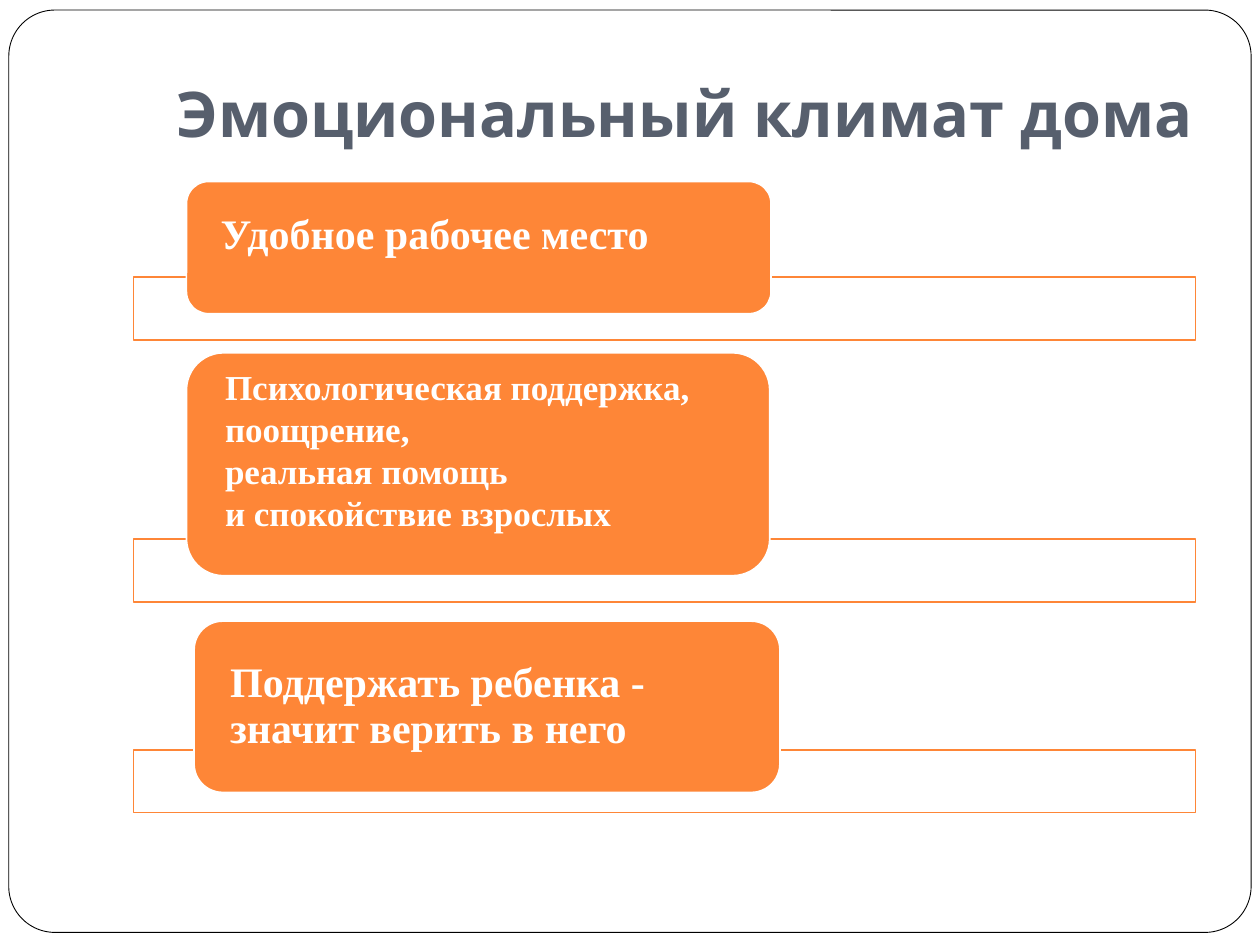
from dataclasses import dataclass

from lxml import etree
from pptx import Presentation, util as u
from pptx.dml.color import RGBColor
from pptx.enum import shapes, text
from pptx.oxml.ns import qn

COLUMNS, ROWS = 100, 75
CELL = u.Inches(0.1)
ORANGE, WHITE, BLACK, SLATE = "FE8637", "FFFFFF", "000000", "575F6D"
BAR_LEFT, BAR_WIDTH, BAR_HEIGHT = 10.6, 84.3, 5


@dataclass
class Advice:
    lines: list[str]
    left: float
    top: float
    width: float
    height: float
    bar_top: float
    size: int = 24
    align: text.PP_ALIGN = text.PP_ALIGN.JUSTIFY
    spacing: float = 1.0
    bottom_inset: float = 0.23


ADVICE = [
    Advice(["Удобное рабочее место"], 14.8, 14.4, 46.4, 10.5, 22),
    Advice(["Психологическая поддержка,", "поощрение,", "реальная помощь",
            "и спокойствие взрослых"], 14.8, 28, 46.3, 17.7, 42.8, size=20),
    Advice(["Поддержать ребенка - значит верить в него"], 15.4, 49.3, 46.5, 13.6, 59.5,
           align=text.PP_ALIGN.LEFT, spacing=0.9, bottom_inset=0),
]


def cells(*counts: float) -> list[int]:
    return [round(count * CELL) for count in counts]


def color(value: str) -> RGBColor:
    return RGBColor.from_string(value)


def add_box(slide, kind, place: tuple, fill: str, line: str, weight: float, opacity: int = 100):
    box = slide.shapes.add_shape(kind, *cells(*place))
    box.shadow.inherit = False
    box.fill.solid()
    box.fill.fore_color.rgb = color(fill)
    box.line.color.rgb = color(line)
    box.line.width = u.Pt(weight)
    if opacity < 100:
        tint = box.fill._xPr.find(qn("a:solidFill"))[0]
        etree.SubElement(tint, qn("a:alpha"), val=str(opacity * 1000))
    return box


def write(shape, lines: list[str], *, font: str, size: int, ink: str, anchor, insets: tuple,
          align=text.PP_ALIGN.LEFT, spacing: float = 1.0) -> None:
    frame = shape.text_frame
    frame.word_wrap = True
    frame.auto_size = text.MSO_AUTO_SIZE.NONE
    frame.vertical_anchor = anchor
    (frame.margin_left, frame.margin_top,
     frame.margin_right, frame.margin_bottom) = map(u.Inches, insets)
    frame.text = "\n".join(lines)
    for paragraph in frame.paragraphs:
        paragraph.alignment = align
        paragraph.line_spacing = spacing
        for run in paragraph.runs:
            run.font.name = font
            run.font.size = u.Pt(size)
            run.font.bold = True
            run.font.color.rgb = color(ink)


def draw_advice(slide, advice: Advice) -> None:
    add_box(slide, shapes.MSO_SHAPE.RECTANGLE,
            (BAR_LEFT, advice.bar_top, BAR_WIDTH, BAR_HEIGHT), WHITE, ORANGE, 1, opacity=90)
    card = add_box(slide, shapes.MSO_SHAPE.ROUNDED_RECTANGLE,
                   (advice.left, advice.top, advice.width, advice.height), ORANGE, WHITE, 1)
    write(card, advice.lines, font="Times New Roman", size=advice.size, ink=WHITE,
          anchor=text.MSO_ANCHOR.MIDDLE, insets=(0.22, 0, 0.22, advice.bottom_inset),
          align=advice.align, spacing=advice.spacing)


def main() -> None:
    deck = Presentation()
    deck.slide_width, deck.slide_height = cells(COLUMNS, ROWS)
    slide = deck.slides.add_slide(deck.slide_layouts[5])

    border = add_box(slide, shapes.MSO_SHAPE.ROUNDED_RECTANGLE,
                     (0.7, 0.8, 98.6, 73.2), WHITE, BLACK, 0.5)
    border.adjustments[0] = 0.05

    title = slide.shapes.title
    slide.shapes._spTree.append(title._element)
    title.left, title.top, title.width, title.height = cells(13, 2.8, 85, 10.1)
    write(title, ["Эмоциональный климат дома"], font="Karla", size=36, ink=SLATE,
          anchor=text.MSO_ANCHOR.BOTTOM, insets=(0.1, 0.05, 0.1, 0.1))

    for advice in ADVICE:
        draw_advice(slide, advice)
    deck.save("out.pptx")


if __name__ == "__main__":
    main()
